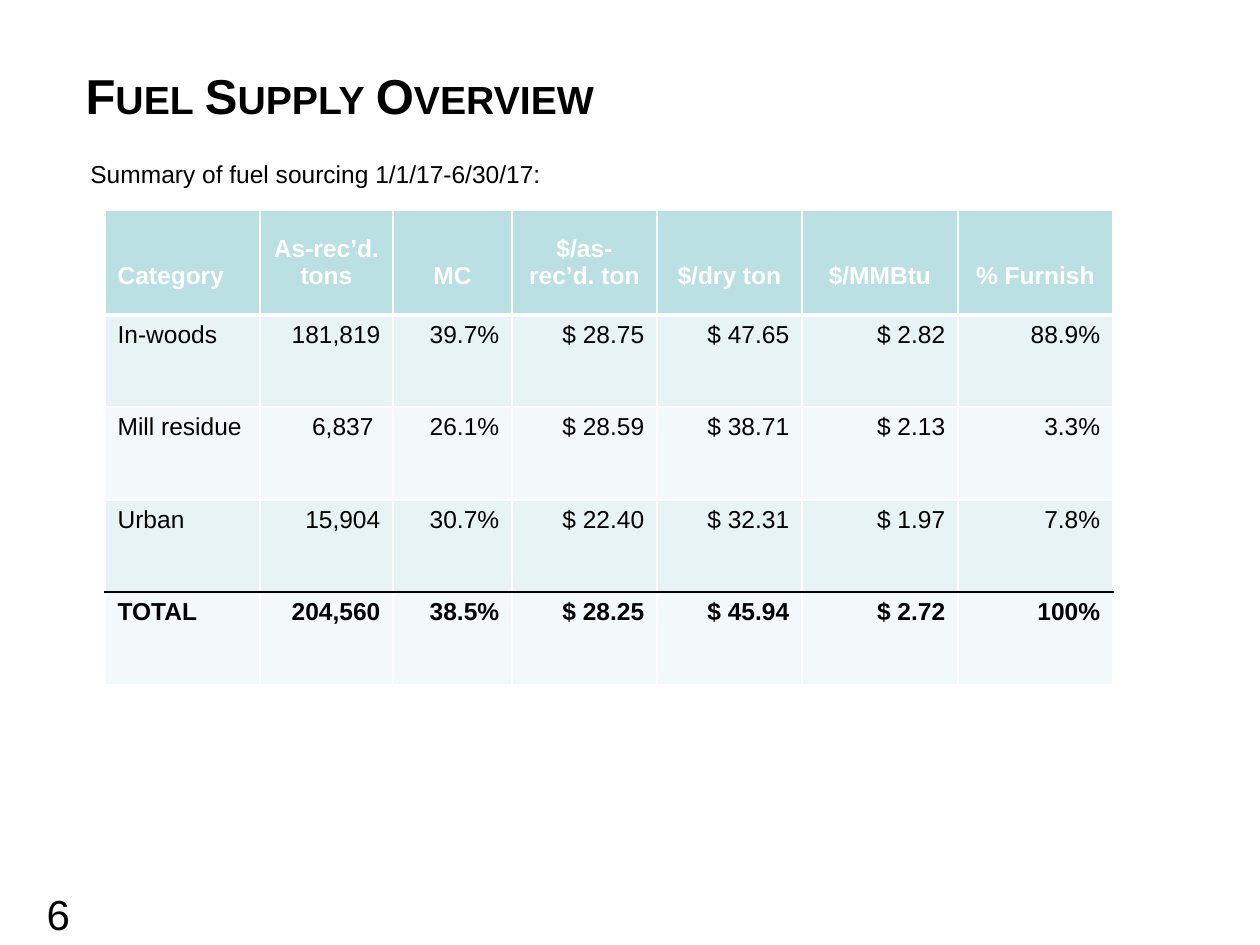
from lxml.etree import SubElement
from pptx import Presentation
from pptx.dml.color import RGBColor
from pptx.enum.text import MSO_ANCHOR as Anchor, PP_ALIGN as Align
from pptx.oxml.ns import qn
from pptx.util import Pt

SCALE = 914400 / 126
BLACK, WHITE = "000000", "FFFFFF"
HEADER_FILL, BAND_FILLS = "BBE0E3", ("E7F3F4", "F3F9FA")
COLUMN_WIDTHS = (155, 133, 119, 145, 145, 156, 155)
ROW_HEIGHTS = (105, 92, 93, 92, 93)
FUEL_ROWS = (
    ("Category", "As-rec’d. tons", "MC", "$/as-rec’d. ton", "$/dry ton", "$/MMBtu", "% Furnish"),
    ("In-woods", "181,819", "39.7%", "$ 28.75", "$ 47.65", "$ 2.82", "88.9%"),
    ("Mill residue", "6,837 ", "26.1%", "$ 28.59", "$ 38.71", "$ 2.13", "3.3%"),
    ("Urban", "15,904", "30.7%", "$ 22.40", "$ 32.31", "$ 1.97", "7.8%"),
    ("TOTAL", "204,560", "38.5%", "$ 28.25", "$ 45.94", "$ 2.72", "100%"),
)
HEADER_ROW, TOTAL_ROW = 0, len(FUEL_ROWS) - 1


def px(length):
    return round(length * SCALE)


def color(value):
    return RGBColor.from_string(value)


def write_text(frame, text, size, ink=BLACK, bold=False, align=Align.LEFT):
    frame.text = text
    frame.word_wrap = True
    para = frame.paragraphs[0]
    para.alignment = align
    font = para.runs[0].font
    font.name, font.size, font.bold = "Arial", Pt(size), bold
    font.color.rgb = color(ink)


def add_title(page, text):
    title = page.shapes.title
    title.left, title.top, title.width, title.height = map(px, (73, 42, 1113, 105))
    write_text(title.text_frame, text, 28, bold=True)
    title.text_frame.vertical_anchor = Anchor.MIDDLE
    span = title.text_frame.paragraphs[0].runs[0]
    span._r.get_or_add_rPr().set("cap", "small")


def add_text(page, bounds, text, size, align=Align.LEFT):
    box = page.shapes.add_textbox(*map(px, bounds))
    write_text(box.text_frame, text, size, align=align)


def set_border(cell, side, ink, width):
    line = SubElement(cell._tc.get_or_add_tcPr(), qn(f"a:ln{side}"), w=str(Pt(width)))
    fill = SubElement(line, qn("a:solidFill"))
    SubElement(fill, qn("a:srgbClr"), val=ink)


def format_cell(cell, text, row, column):
    is_header, is_total = row == HEADER_ROW, row == TOTAL_ROW
    top = (BLACK, 1) if is_total else (WHITE, 3 if row == HEADER_ROW + 1 else 1)
    bottom = (BLACK, 1) if row == TOTAL_ROW - 1 else (WHITE, 3 if is_header else 1)
    for side, border in (("L", (WHITE, 1)), ("R", (WHITE, 1)), ("T", top), ("B", bottom)):
        set_border(cell, side, *border)
    cell.fill.solid()
    cell.fill.fore_color.rgb = color(HEADER_FILL if is_header else BAND_FILLS[(row - 1) % 2])
    align = Align.LEFT if column == 0 else Align.CENTER if is_header else Align.RIGHT
    write_text(cell.text_frame, text, 14, WHITE if is_header else BLACK, is_header or is_total, align)
    if is_header:
        cell.vertical_anchor = Anchor.BOTTOM
        cell.margin_bottom = px(25)


def add_fuel_table(page):
    bounds = (105, 210, sum(COLUMN_WIDTHS), sum(ROW_HEIGHTS))
    frame = page.shapes.add_table(len(FUEL_ROWS), len(COLUMN_WIDTHS), *map(px, bounds))
    table = frame.table
    for column, width in zip(table.columns, COLUMN_WIDTHS):
        column.width = px(width)
    for row, height in zip(table.rows, ROW_HEIGHTS):
        row.height = px(height)
    for row, texts in enumerate(FUEL_ROWS):
        for column, text in enumerate(texts):
            format_cell(table.cell(row, column), text, row, column)


def main():
    deck = Presentation()
    deck.slide_width, deck.slide_height = px(1260), px(945)
    page = deck.slides.add_slide(deck.slide_layouts[5])
    add_title(page, "Fuel Supply Overview")
    add_text(page, (78, 153, 1113, 630), "Summary of fuel sourcing 1/1/17-6/30/17:", 14)
    add_fuel_table(page)
    add_text(page, (0, 882, 105, 63), " 6", 24, Align.CENTER)
    deck.save("out.pptx")


if __name__ == "__main__":
    main()
